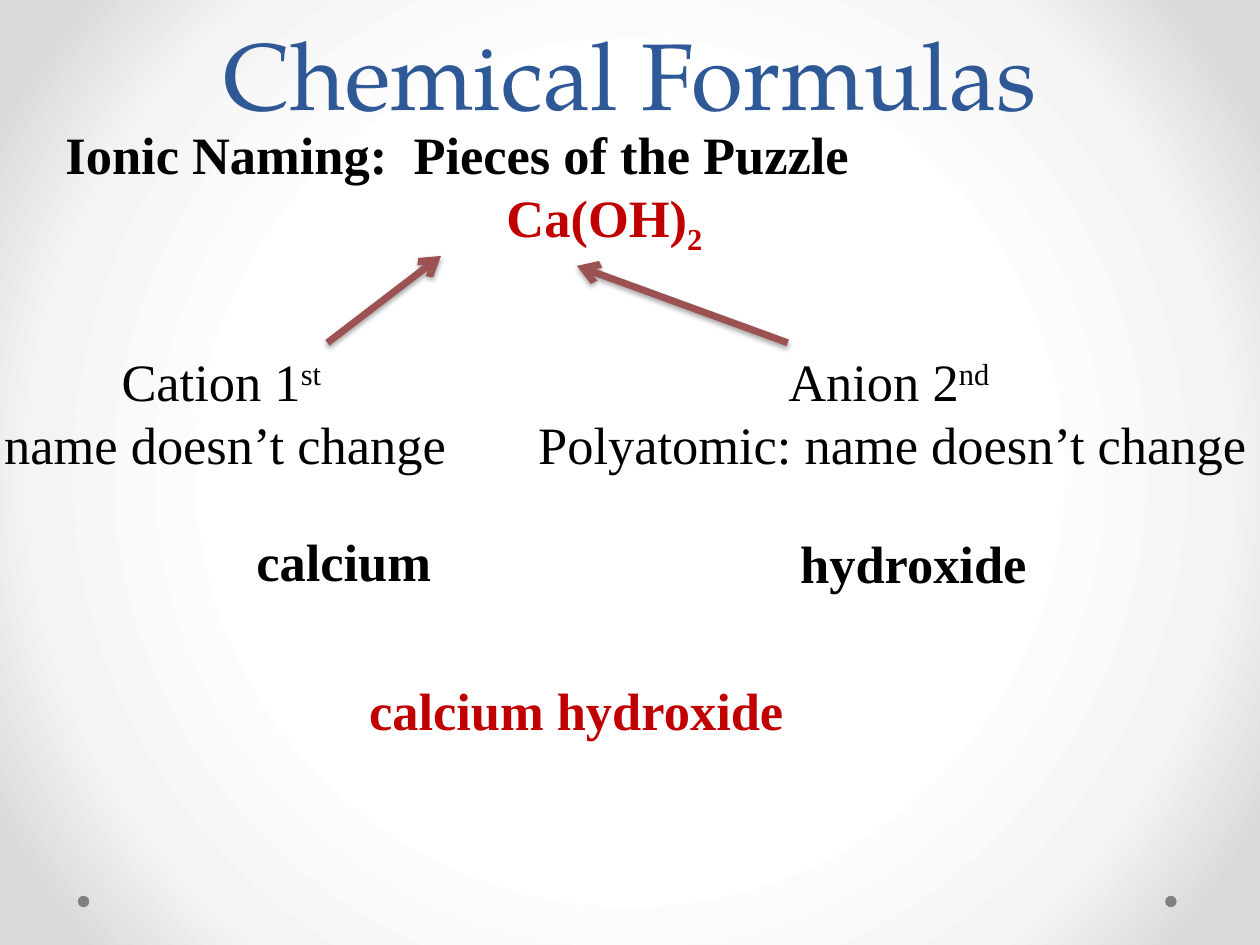
import pptx
import pptx.util
import pptx.dml.color
import pptx.enum.shapes
import pptx.enum.text
import pptx.oxml
import pptx.oxml.ns
from pptx.util import Cm

COLORS = {
    "title": "2F5897", "text": "000000", "accent": "C00000",
    "arrow": "9C5252", "dot": "808080",
}
BACKDROP = ((50, "FFFFFF"), (76, "F4F4F4"), (92, "DADADA"))
BODY_FONT, TITLE_FONT = "Times New Roman", "TeX Gyre Pagella"
CENTER = pptx.enum.text.PP_ALIGN.CENTER
NS = pptx.oxml.ns.nsdecls("a")


def rgb(name):
    return pptx.dml.color.RGBColor.from_string(COLORS[name])


def add_run(paragraph, text, color="text", bold=False, size=30,
            font=BODY_FONT, baseline=0):
    run = paragraph.add_run()
    run.text = text
    run.font.name, run.font.size, run.font.bold = font, pptx.util.Pt(size), bold
    run.font.color.rgb = rgb(color)
    if baseline:
        run.font._element.set("baseline", str(baseline * 1000))


def add_text_frame(slide, box):
    frame = slide.shapes.add_textbox(*map(Cm, box)).text_frame
    frame.word_wrap = True
    frame.auto_size = pptx.enum.text.MSO_AUTO_SIZE.SHAPE_TO_FIT_TEXT
    return frame


def add_label(slide, box, text, color="text"):
    add_run(add_text_frame(slide, box).paragraphs[0], text, color, bold=True)


def add_arrow(slide, start, tip):
    arrow = slide.shapes.add_connector(
        pptx.enum.shapes.MSO_CONNECTOR.STRAIGHT, *map(Cm, start + tip))
    arrow.line.color.rgb = rgb("arrow")
    arrow.line.width = pptx.util.Pt(4)
    arrow.line._get_or_add_ln().append(
        pptx.oxml.parse_xml(f'<a:tailEnd {NS} type="arrow"/>'))
    # Soft shadow straight below the line
    arrow._element.spPr.append(pptx.oxml.parse_xml(
        f'<a:effectLst {NS}><a:outerShdw blurRad="39370" dist="22860" '
        'dir="5400000" rotWithShape="0"><a:srgbClr val="000000">'
        '<a:alpha val="35000"/></a:srgbClr></a:outerShdw></a:effectLst>'))


def paint_background(slide):
    fill = slide.background.fill
    fill.solid()
    stops = "".join(f'<a:gs pos="{pos * 1000}"><a:srgbClr val="{color}"/></a:gs>'
                    for pos, color in BACKDROP)
    gradient = pptx.oxml.parse_xml(
        f'<a:gradFill {NS} rotWithShape="1"><a:gsLst>{stops}</a:gsLst>'
        '<a:path path="circle"><a:fillToRect l="50000" t="50000" r="50000" '
        'b="50000"/></a:path></a:gradFill>')
    properties = slide.background._cSld.bg.bgPr
    properties.replace(properties[0], gradient)


def add_footer_dots(slide, box):
    left, top, width, size = box
    for x in (left, left + width - size):
        dot = slide.shapes.add_shape(pptx.enum.shapes.MSO_SHAPE.OVAL,
                                     Cm(x), Cm(top), Cm(size), Cm(size))
        dot.shadow.inherit = False
        dot.fill.solid()
        dot.fill.fore_color.rgb = rgb("dot")
        dot.line.fill.background()


def add_title(slide, box):
    frame = add_text_frame(slide, box)
    frame.auto_size = pptx.enum.text.MSO_AUTO_SIZE.NONE
    frame.vertical_anchor = pptx.enum.text.MSO_ANCHOR.BOTTOM
    title = frame.paragraphs[0]
    title.alignment = CENTER
    title.line_spacing = pptx.util.Pt(58)
    add_run(title, "Chemical Formulas", "title", size=54, font=TITLE_FONT)


def add_heading(slide, box):
    frame = add_text_frame(slide, box)
    add_run(frame.paragraphs[0], "Ionic Naming:  Pieces of the Puzzle", bold=True)
    formula = frame.add_paragraph()
    formula._p.get_or_add_pPr().set("marL", str(Cm(8.89)))
    add_run(formula, "Ca(OH)", "accent", bold=True)
    add_run(formula, "2", "accent", bold=True, baseline=-25)


def add_ion(slide, box, ion, ordinal, rule, name, name_box, arrow_start, arrow_tip):
    """Arrow up to the formula, naming rule, and the ion's name below."""
    left, top = box[:2]

    def place(x, y):
        return left + x, top + y

    add_arrow(slide, place(*arrow_start), place(*arrow_tip))
    frame = add_text_frame(slide, box)
    order, naming = frame.paragraphs[0], frame.add_paragraph()
    order.alignment = naming.alignment = CENTER
    add_run(order, ion)
    add_run(order, ordinal, baseline=30)
    add_run(naming, rule)
    add_label(slide, place(*name_box[:2]) + name_box[2:], name)


def main():
    deck = pptx.Presentation()
    deck.slide_width, deck.slide_height = Cm(25.4), Cm(19.05)
    slide = deck.slides.add_slide(deck.slide_layouts[6])

    paint_background(slide)
    add_footer_dots(slide, (1.57, 18.06, 22.15, 0.23))
    add_title(slide, (1.9, 0.64, 21.6, 2.1))
    add_heading(slide, (1.07, 2.34, 23.06, 2.82))
    add_ion(slide, (-0.64, 6.91, 10.36, 2.82), "Cation 1", "st ",
            "name doesn’t change", "calcium", (5.56, 3.63, 4.52, 1.55),
            arrow_start=(7.24, 0), arrow_tip=(9.53, -1.75))
    add_ion(slide, (10.16, 6.91, 15.67, 2.82), "Anion 2", "nd ",
            "Polyatomic: name doesn’t change", "hydroxide", (5.72, 3.68, 5.33, 1.55),
            arrow_start=(5.72, 0), arrow_tip=(1.47, -1.55))
    # Full compound name
    add_label(slide, (7.19, 13.54, 9.73, 1.55), "calcium hydroxide", "accent")

    deck.save("out.pptx")


if __name__ == "__main__":
    main()
